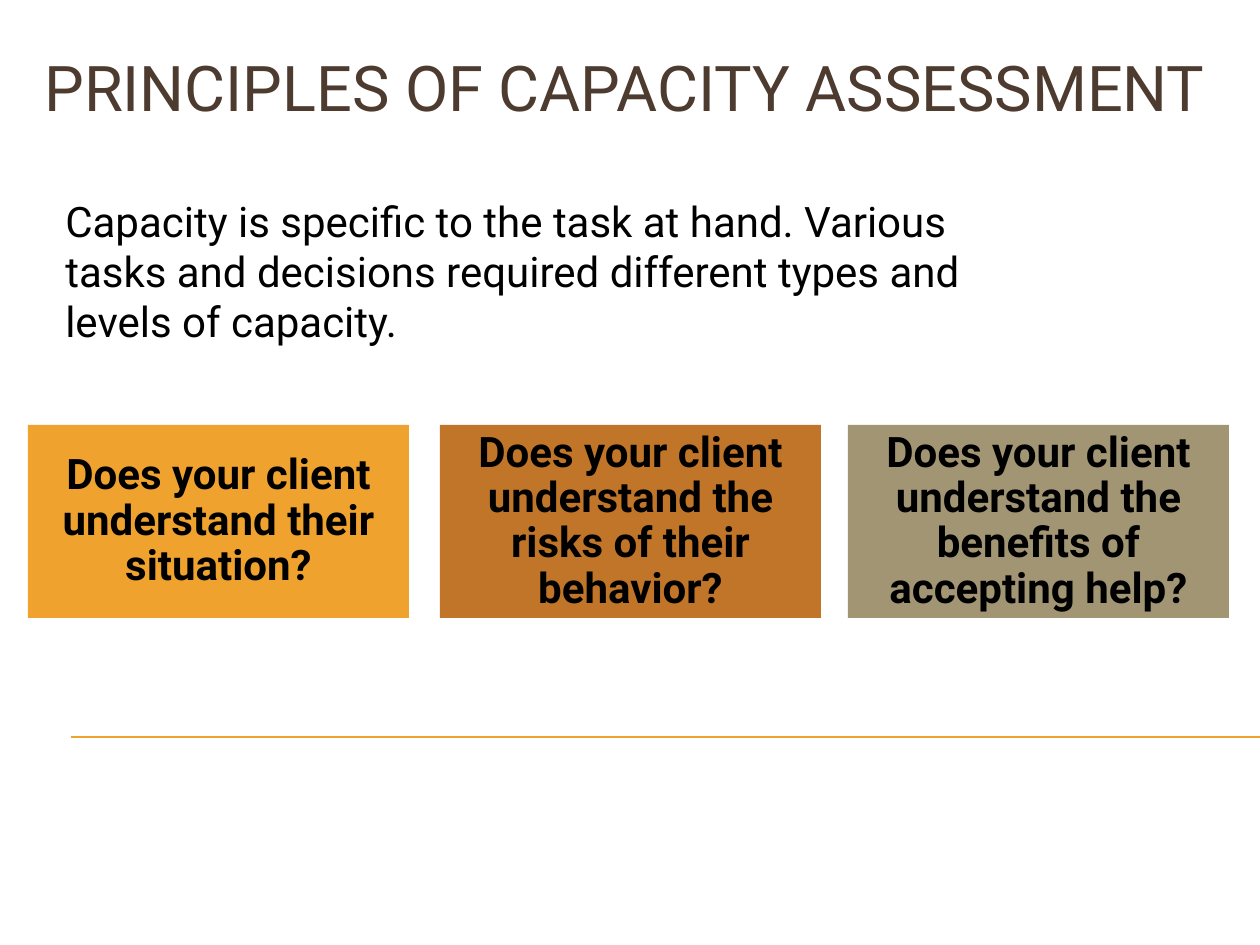
from dataclasses import dataclass

from lxml.etree import SubElement
from pptx import Presentation
from pptx.dml.color import RGBColor
from pptx.enum.shapes import MSO_CONNECTOR, MSO_SHAPE
from pptx.enum.text import MSO_ANCHOR, PP_ALIGN
from pptx.oxml.ns import qn
from pptx.util import Emu, Pt


@dataclass(frozen=True)
class Theme:
    font: str = "Roboto"
    title: int = 36
    body: int = 24
    rule: float = 0.75
    ink: str = "000000"
    brown: str = "4E3B30"
    amber: str = "F0A22E"
    rust: str = "C17529"
    olive: str = "A19574"


THEME = Theme()
CARDS = [
    (0, THEME.amber, "Does your client understand their situation?"),
    (412, THEME.rust, "Does your client understand the risks of their behavior?"),
    (820, THEME.olive, "Does your client understand the benefits of accepting help?"),
]


def px(*nums):
    """Turn px lengths into EMU, at 126 px to the inch."""
    return [Emu(round(n * 914400 / 126)) for n in nums]


def write(frame, text, size, color, bold=False):
    frame.word_wrap = True
    para = frame.paragraphs[0]
    para.text = text
    font = para.font
    font.name, font.size, font.bold = THEME.font, Pt(size), bold
    font.color.rgb = RGBColor.from_string(color)
    return para


def add_text(slide, box, text, size, color):
    frame = slide.shapes.add_textbox(*px(*box)).text_frame
    write(frame, text, size, color)


def add_rule(slide, left, top, right):
    line = slide.shapes.add_connector(
        MSO_CONNECTOR.STRAIGHT, *px(left, top, right, top))
    line.line.color.rgb = RGBColor.from_string(THEME.amber)
    line.line.width = Pt(THEME.rule)
    SubElement(line._element.spPr, qn("a:effectLst"))


def add_card(slide, box, fill, text):
    card = slide.shapes.add_shape(MSO_SHAPE.RECTANGLE, *px(*box))
    card.shadow.inherit = False
    card.fill.solid()
    card.fill.fore_color.rgb = RGBColor.from_string(fill)
    card.line.fill.background()
    frame = card.text_frame
    frame.vertical_anchor = MSO_ANCHOR.MIDDLE
    frame.margin_left, frame.margin_top, frame.margin_right, frame.margin_bottom = (
        px(13) * 4)
    para = write(frame, text, THEME.body, THEME.ink, bold=True)
    para.alignment = PP_ALIGN.CENTER
    para.line_spacing = 0.9


def add_cards(slide, left, top, width, height):
    for shift, fill, text in CARDS:
        add_card(slide, (left + shift, top, width, height), fill, text)


def main():
    deck = Presentation()
    deck.slide_width, deck.slide_height = px(1260, 945)
    slide = deck.slides.add_slide(deck.slide_layouts[6])
    add_rule(slide, 71, 737, 1260)
    add_text(slide, (53, 189, 998, 165),
             "Capacity is specific to the task at hand. Various tasks and "
             "decisions required different types and levels of capacity.",
             THEME.body, THEME.ink)
    add_text(slide, (32, 42, 1197, 116), "PRINCIPLES OF CAPACITY ASSESSMENT",
             THEME.title, THEME.brown)
    add_cards(slide, 28, 425, 381, 193)
    deck.save("out.pptx")


if __name__ == "__main__":
    main()
